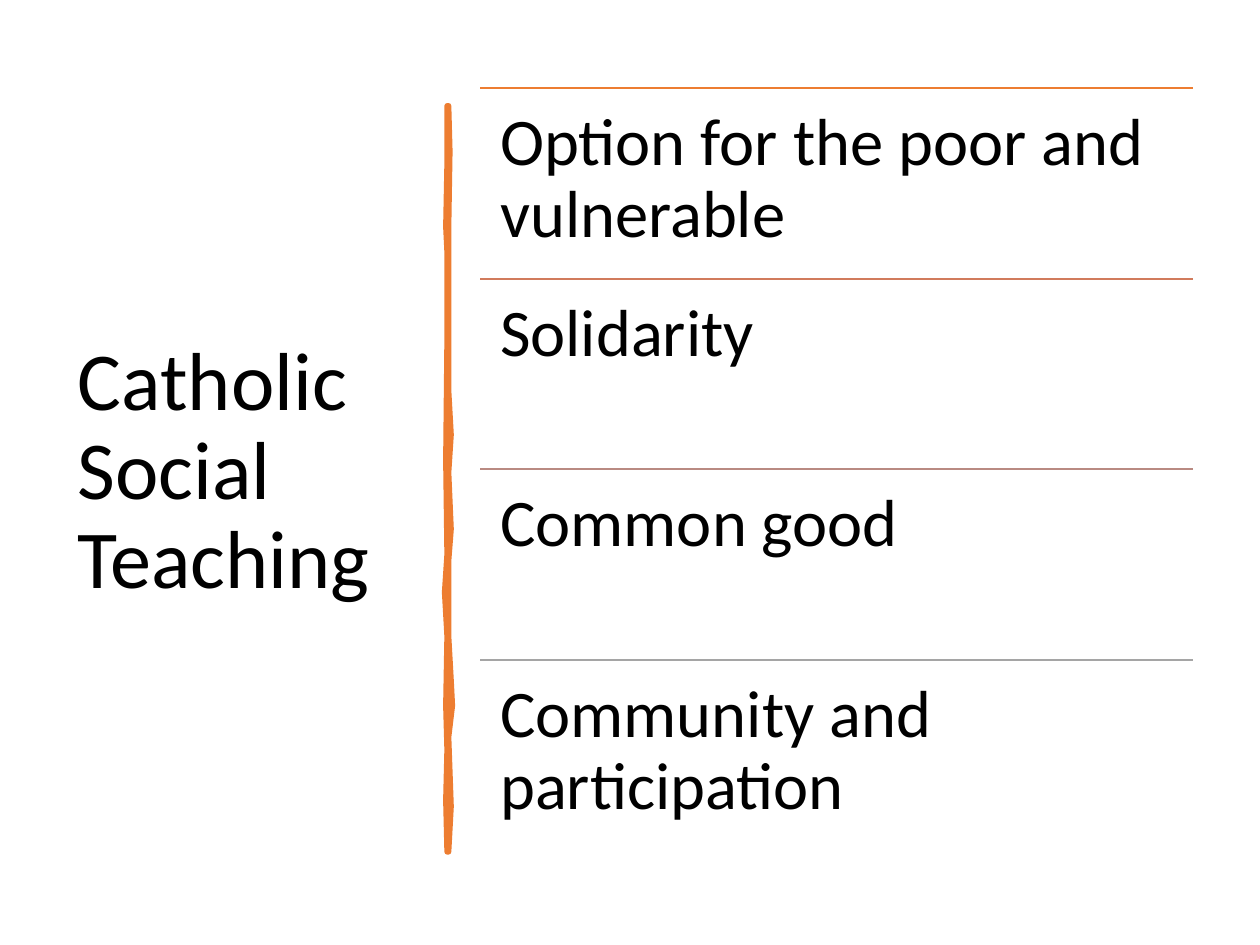
from lxml import etree
from pptx import Presentation
from pptx.dml.color import RGBColor
from pptx.enum.shapes import MSO_CONNECTOR
from pptx.enum.text import MSO_ANCHOR
from pptx.oxml.ns import qn
from pptx.util import Inches, Pt

STRAIGHT = MSO_CONNECTOR.STRAIGHT
TOP, MIDDLE = MSO_ANCHOR.TOP, MSO_ANCHOR.MIDDLE

BLACK = RGBColor(0x00, 0x00, 0x00)
ORANGE = RGBColor(0xED, 0x7D, 0x31)
TERRACOTTA = RGBColor(0xD1, 0x7B, 0x5C)
DUSTY_ROSE = RGBColor(0xB9, 0x8A, 0x82)
GRAY = RGBColor(0xA5, 0xA5, 0xA5)

PRINCIPLES = [
    ("Option for the poor and vulnerable", ORANGE),
    ("Solidarity", TERRACOTTA),
    ("Common good", DUSTY_ROSE),
    ("Community and participation", GRAY),
]
LIST_LEFT, LIST_TOP, LIST_WIDTH = 3.81, 0.7, 5.66
ROW_HEIGHT = 6.05 / len(PRINCIPLES)

# Brush stroke edges as (x, y) in inches: down the right, up the left
STROKE_RIGHT = [
    (3.56, 0.84), (3.57, 1.2), (3.56, 1.8), (3.56, 3.1), (3.58, 3.45),
    (3.56, 3.75), (3.58, 4.2), (3.56, 4.45), (3.56, 5.05), (3.58, 5.4),
    (3.59, 5.6), (3.56, 5.85), (3.58, 6.4), (3.56, 6.76),
]
STROKE_LEFT = [
    (3.55, 6.76), (3.54, 6.35), (3.55, 5.95), (3.54, 5.6), (3.55, 5.05),
    (3.53, 4.7), (3.55, 4.4), (3.54, 3.65), (3.55, 2.7), (3.55, 2.0),
    (3.54, 1.8), (3.55, 1.3), (3.55, 0.84),
]


def add_text(slide, text, box, size, anchor, inset_x, inset_y):
    frame = slide.shapes.add_textbox(*map(Inches, box)).text_frame
    settings = {
        "word_wrap": True, "vertical_anchor": anchor,
        "margin_left": Inches(inset_x), "margin_right": Inches(inset_x),
        "margin_top": Inches(inset_y), "margin_bottom": Inches(inset_y),
    }
    for name, value in settings.items():
        setattr(frame, name, value)
    paragraph = frame.paragraphs[0]
    paragraph.line_spacing = 0.9
    run = paragraph.add_run()
    run.text = text
    run.font.name = "Calibri"
    run.font.size = Pt(size)
    run.font.color.rgb = BLACK


def add_rule(slide, top, color):
    rule = slide.shapes.add_connector(
        STRAIGHT, Inches(LIST_LEFT), Inches(top),
        Inches(LIST_LEFT + LIST_WIDTH), Inches(top))
    rule.line.color.rgb = color
    rule.line.width = Pt(1)
    etree.SubElement(rule._element.spPr, qn("a:effectLst"))


def add_brush_stroke(slide):
    """Draw the hand-drawn divider with softly rounded ends."""
    edge = [(Inches(x), Inches(y)) for x, y in STROKE_RIGHT + STROKE_LEFT]
    builder = slide.shapes.build_freeform(*edge[0], scale=1.0)
    builder.add_line_segments(edge[1:], close=True)
    stroke = builder.convert_to_shape()
    stroke.shadow.inherit = False
    stroke.fill.solid()
    stroke.fill.fore_color.rgb = ORANGE
    stroke.line.color.rgb = ORANGE
    stroke.line.width = Pt(3.25)
    etree.SubElement(stroke.line._get_or_add_ln(), qn("a:round"))


def main():
    prs = Presentation()
    prs.slide_width, prs.slide_height = Inches(10), Inches(7.5)
    slide = prs.slides.add_slide(prs.slide_layouts[6])

    add_text(slide, "Catholic Social Teaching", (0.52, 0.7, 2.8, 6.11),
             47, MIDDLE, 0.1, 0.05)
    add_brush_stroke(slide)
    for row, (principle, color) in enumerate(PRINCIPLES):
        top = LIST_TOP + row * ROW_HEIGHT
        add_rule(slide, top, color)
        add_text(slide, principle, (LIST_LEFT, top, LIST_WIDTH, ROW_HEIGHT),
                 38, TOP, 0.16, 0.16)

    prs.save("out.pptx")


if __name__ == "__main__":
    main()
